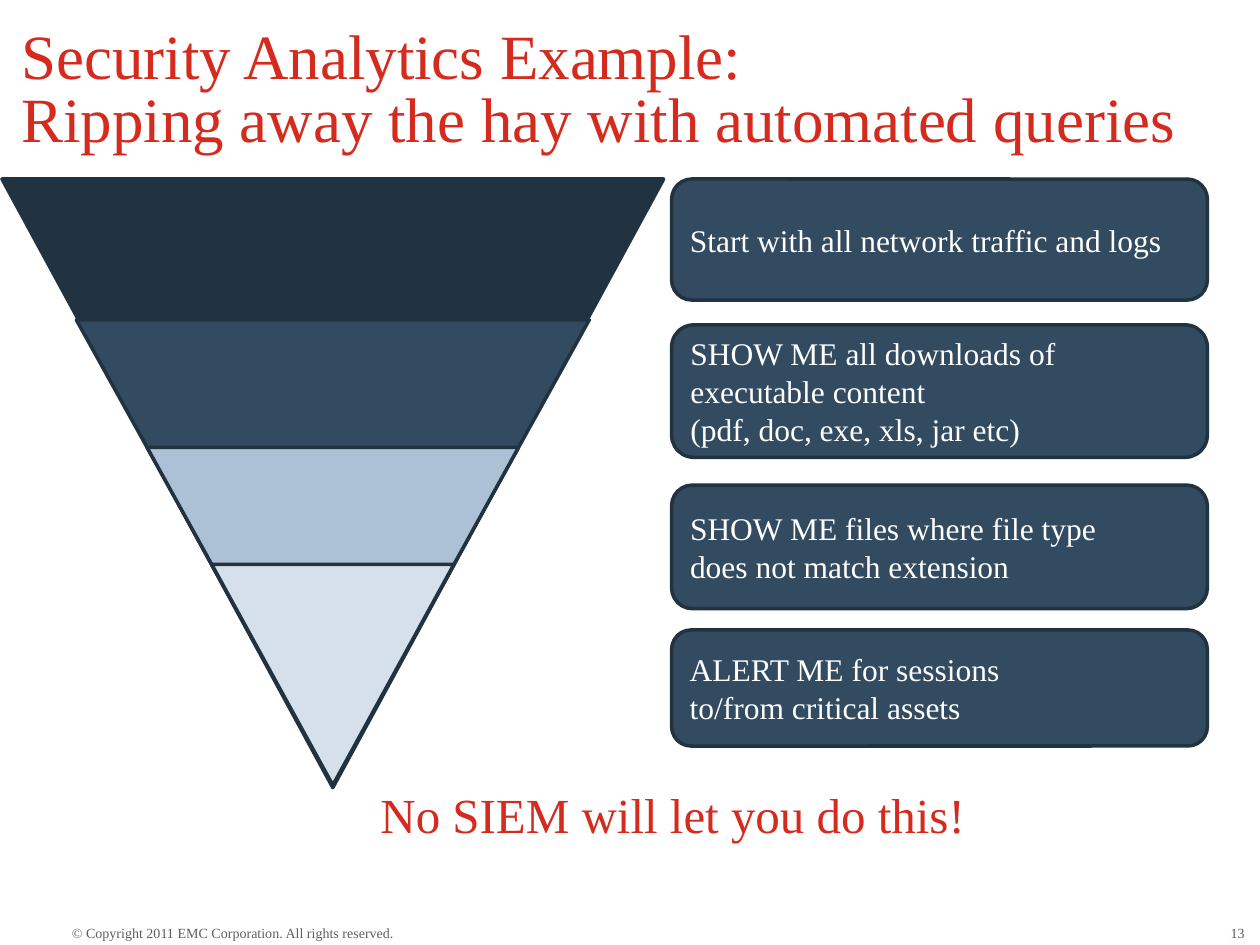
from dataclasses import dataclass

from lxml import etree
from pptx import Presentation
from pptx.dml.color import RGBColor
from pptx.enum.shapes import MSO_SHAPE
from pptx.enum.text import MSO_ANCHOR, PP_ALIGN
from pptx.oxml.ns import qn
from pptx.util import Cm, Pt

TRIANGLE = MSO_SHAPE.ISOSCELES_TRIANGLE
ROUNDED = MSO_SHAPE.ROUNDED_RECTANGLE
LEFT, RIGHT = PP_ALIGN.LEFT, PP_ALIGN.RIGHT
TOP, MIDDLE, BOTTOM = MSO_ANCHOR.TOP, MSO_ANCHOR.MIDDLE, MSO_ANCHOR.BOTTOM


@dataclass(frozen=True)
class Theme:
    font: str = "Times New Roman"
    accent: str = "D52B1E"
    outline: str = "213241"
    card: str = "324B61"
    card_text: str = "FFFFFF"
    footer: str = "5F5F5F"
    funnel: tuple = ("213241", "324B61", "ACC1D5", "D5E0EA")
    title_size: int = 36
    callout_size: int = 28
    card_size: int = 18
    footer_size: int = 8
    line_width: int = 2


class FunnelSlide:
    def __init__(self, slide, theme):
        self.slide = slide
        self.theme = theme

    def fill_text(self, frame, text, size, color, align=LEFT, spacing=None):
        frame.text = text
        for paragraph in frame.paragraphs:
            paragraph.alignment = align
            paragraph.line_spacing = spacing
            for run in paragraph.runs:
                run.font.name = self.theme.font
                run.font.size = Pt(size)
                run.font.color.rgb = RGBColor.from_string(color)

    def text(self, box, text, size, color, align=LEFT, anchor=TOP,
             wrap=True, inset=True, spacing=None):
        frame = self.slide.shapes.add_textbox(*map(Cm, box)).text_frame
        frame.word_wrap = wrap
        frame.vertical_anchor = anchor
        if not inset:
            frame.margin_left = frame.margin_right = 0
            frame.margin_top = frame.margin_bottom = 0
        self.fill_text(frame, text, size, color, align, spacing)

    def outlined_shape(self, kind, box, fill):
        shape = self.slide.shapes.add_shape(kind, *map(Cm, box))
        shape.shadow.inherit = False
        shape.fill.solid()
        shape.fill.fore_color.rgb = RGBColor.from_string(fill)
        shape.line.color.rgb = RGBColor.from_string(self.theme.outline)
        shape.line.width = Pt(self.theme.line_width)
        outline = shape._element.spPr.find(qn("a:ln"))
        etree.SubElement(outline, qn("a:round"))
        return shape

    def funnel_layer(self, center, top, width, height, fill):
        """Add a triangle that points down."""
        box = (center - width / 2, top, width, height)
        layer = self.outlined_shape(TRIANGLE, box, fill)
        layer._element.spPr.find(qn("a:xfrm")).set("flipV", "1")

    def card(self, box, text):
        frame = self.outlined_shape(ROUNDED, box, self.theme.card).text_frame
        frame.word_wrap = True
        frame.vertical_anchor = MIDDLE
        self.fill_text(frame, text, self.theme.card_size, self.theme.card_text)


FUNNEL_CENTER = 6.71
FUNNEL_LAYERS = [  # top, width, height
    (3.61, 13.34, 12.27),
    (6.45, 10.34, 9.32),
    (9.02, 7.49, 6.78),
    (11.38, 4.88, 4.45),
]
CARD_LEFT, CARD_WIDTH = 13.54, 10.8
CARDS = [  # top, height, text
    (3.61, 2.44, "Start with all network traffic and logs"),
    (6.55, 2.67, "SHOW ME all downloads of executable content\n"
                 "(pdf, doc, exe, xls, jar etc)"),
    (9.78, 2.49, "SHOW ME files where file type\ndoes not match extension"),
    (12.7, 2.34, "ALERT ME for sessions\nto/from critical assets"),
]


def main():
    presentation = Presentation()
    presentation.slide_width, presentation.slide_height = Cm(25.4), Cm(19.05)
    theme = Theme()
    page = FunnelSlide(
        presentation.slides.add_slide(presentation.slide_layouts[6]), theme)

    page.text((23.62, 18.64, 1.47, 0.33), "13", theme.footer_size,
              theme.footer, align=RIGHT, inset=False)
    page.text((1.45, 18.64, 7.06, 0.33),
              "© Copyright 2011 EMC Corporation. All rights reserved.",
              theme.footer_size, theme.footer, wrap=False, inset=False)
    page.text((0.43, 0.56, 24.38, 2.57),
              "Security Analytics Example:\v"
              "Ripping away the hay with automated queries",
              theme.title_size, theme.accent, anchor=BOTTOM, inset=False,
              spacing=Pt(theme.title_size))

    for (top, width, height), fill in zip(FUNNEL_LAYERS, theme.funnel):
        page.funnel_layer(FUNNEL_CENTER, top, width, height, fill)
    for top, height, text in CARDS:
        page.card((CARD_LEFT, top, CARD_WIDTH, height), text)

    page.text((7.42, 15.7, 12.29, 1.45), "No SIEM will let you do this!",
              theme.callout_size, theme.accent, wrap=False)
    presentation.save("out.pptx")


if __name__ == "__main__":
    main()
